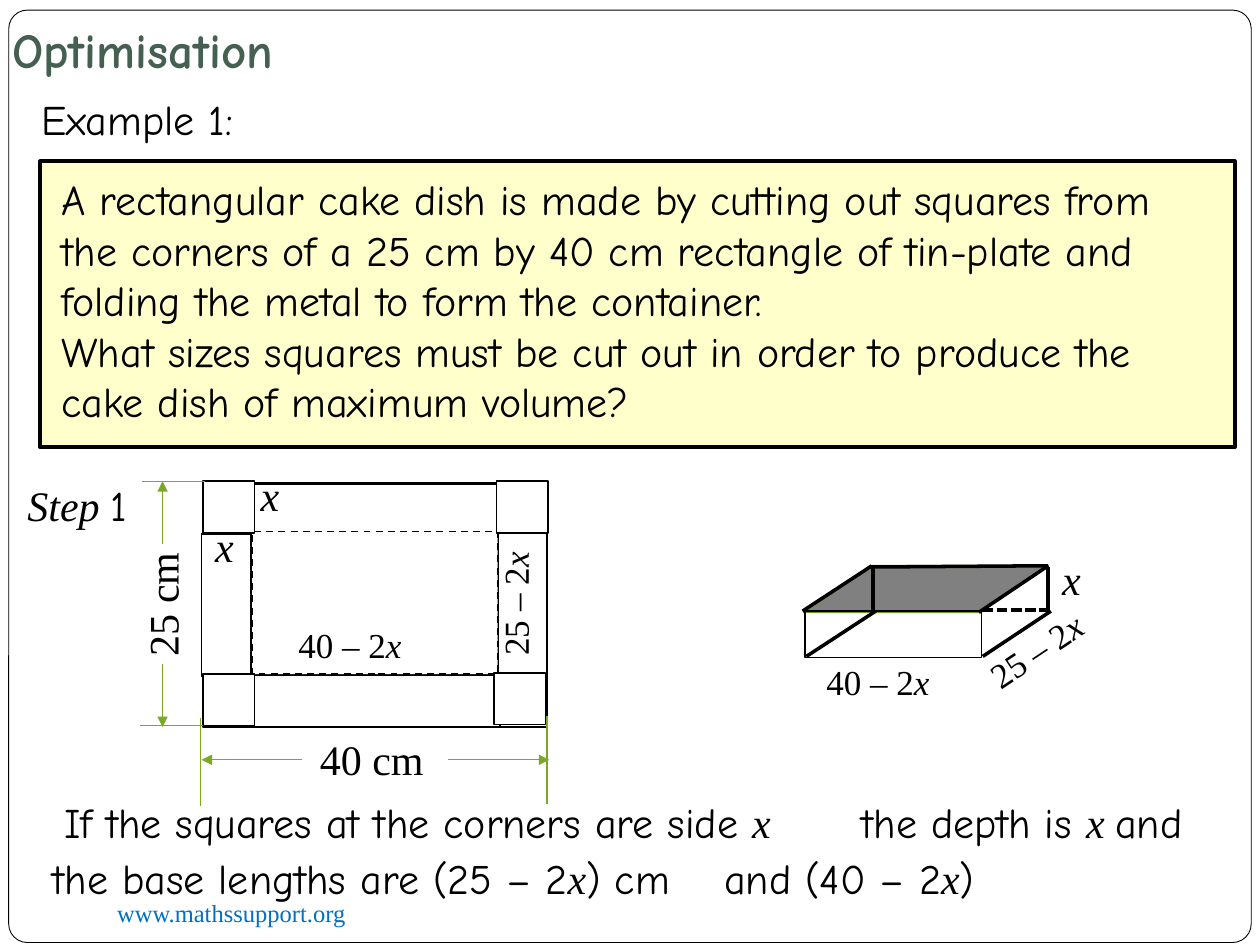
from lxml import etree
from pptx import Presentation
from pptx.dml.color import RGBColor
from pptx.enum.dml import MSO_LINE
from pptx.enum.shapes import MSO_CONNECTOR, MSO_SHAPE
from pptx.enum.text import MSO_ANCHOR
from pptx.oxml.ns import qn
from pptx.util import Pt

RECTANGLE = MSO_SHAPE.RECTANGLE
ROUNDED = MSO_SHAPE.ROUNDED_RECTANGLE
PARALLELOGRAM = MSO_SHAPE.PARALLELOGRAM
STRAIGHT = MSO_CONNECTOR.STRAIGHT
DASH, SHORT_DASH = MSO_LINE.DASH, MSO_LINE.SQUARE_DOT
BOTTOM = MSO_ANCHOR.BOTTOM

BLACK = RGBColor(0x00, 0x00, 0x00)
WHITE = RGBColor(0xFF, 0xFF, 0xFF)
CREAM = RGBColor(0xFF, 0xFF, 0xCC)
GREY = RGBColor(0x80, 0x80, 0x80)
GREEN = RGBColor(0x7C, 0xA8, 0x27)
DARK_GREEN = RGBColor(0x71, 0x96, 0x29)
TITLE_GREEN = RGBColor(0x45, 0x5F, 0x51)
LINK_BLUE = RGBColor(0x00, 0x70, 0xC0)

HAND, SERIF = "Comic Neue", "Times New Roman"

QUESTION = [
    "A rectangular cake dish is made by cutting out squares from the corners of "
    "a 25 cm by 40 cm rectangle of tin-plate and folding the metal to form the container.",
    "What sizes squares must be cut out in order to produce the cake dish of maximum volume?",
]

# Wrapped sentences: left, top, width, runs of (text, is_variable)
SENTENCES = [
    (16.6, 49.7, 419, [("Example 1:", False)]),
    (29.5, 451.4, 519, [("If the squares at the corners are side ", False), ("x", True)]),
    (485.3, 451.4, 232, [("the depth is ", False), ("x ", True), ("and", False)]),
    (23, 483.8, 395, [("the base lengths are (25 – 2", False), ("x", True), (") cm", False)]),
    (406.8, 483.8, 158, [("and (40 – 2", False), ("x", True), (")", False)]),
]

# Diagram labels: left, top, width, size, rotation, plain part, variable part
LABELS = [
    (175.7, 415.4, 80.6, 24, 0, "40 cm", ""),
    (55.4, 326.9, 74.2, 24, 270, "25 cm", ""),
    (141.8, 265, 25.2, 24, 0, "", "x"),
    (115.9, 293.8, 25.2, 24, 0, "", "x"),
    (599.8, 312.5, 25.2, 24, 0, "", "x"),
    (163.4, 352.8, 79.2, 20, 0, "40 – 2", "x"),
    (254.9, 326.2, 79.2, 20, 270, "25 – 2", "x"),
    (465.1, 373.7, 79.2, 20, 0, "40 – 2", "x"),
    (555.1, 354.2, 79.2, 20, 326.2, "25 – 2", "x"),
]

# Flat tin-plate: left, top, width, height
SHEET = (115.9, 275.8, 196.6, 139.7)
FLAPS = [
    (115.2, 305.3, 28.1, 81.4), (284.4, 303.1, 28.1, 82.8),
    (144.7, 276.5, 140.4, 28.1), (145.4, 385.9, 140.4, 29.5),
]
BASE = (144, 303.8, 140.4, 81.4)
CORNER_SIDE = 29.5
CORNERS = [(115.9, 275), (283.7, 275), (115.9, 385.2), (282.2, 384.5)]

# Dimension lines: start x, start y, end x, end y
EXTENSIONS = [
    (114.5, 410.4, 114.5, 460.8), (312.5, 409, 312.5, 459.4),
    (115.9, 414.7, 79.9, 414.7), (81.4, 275, 117.4, 275),
]
ARROWS = [
    (172.8, 434.2, 115.2, 434.2), (256.3, 434.2, 313.9, 434.2),
    (92.9, 379.4, 92.9, 415.4), (92.9, 311, 92.9, 275),
]

# Folded dish
DISH_TOP = (459.4, 323.3, 139.7, 26.6)
DISH_FRONT = (460.1, 349.2, 100.8, 26.6)
DISH_EDGES = [
    (460.8, 375.1, 500.4, 349.2), (561.6, 375.1, 600.5, 349.2),
    (559.4, 349.9, 599, 323.3), (458.6, 349.2, 498.2, 323.3),
    (499, 324, 599, 323.3), (599, 324, 599, 349.2), (499, 322.6, 499, 348.5),
]
DISH_HIDDEN_EDGE = (561.6, 348.5, 601.2, 348.5)


def add_outline(slide, frame, fill=WHITE, line=BLACK, width=1, kind=RECTANGLE, dash=None):
    shape = slide.shapes.add_shape(kind, *map(Pt, frame))
    shape.shadow.inherit = False
    if fill is None:
        shape.fill.background()
    else:
        shape.fill.solid()
        shape.fill.fore_color.rgb = fill
    shape.line.color.rgb = line
    shape.line.width = Pt(width)
    if dash:
        shape.line.dash_style = dash
    return shape


def add_line(slide, ends, color=BLACK, width=2, dash=None, arrow=False):
    connector = slide.shapes.add_connector(STRAIGHT, *map(Pt, ends))
    connector.line.color.rgb = color
    connector.line.width = Pt(width)
    if dash:
        connector.line.dash_style = dash
    if arrow:
        etree.SubElement(connector.line._get_or_add_ln(), qn("a:tailEnd"), type="triangle")
    etree.SubElement(connector._element.spPr, qn("a:effectLst"))


def add_text(slide, frame, paragraphs, wrap=True):
    """Add a text box; each run is (text, font, size, color, bold, italic)."""
    box = slide.shapes.add_textbox(*map(Pt, frame))
    text_frame = box.text_frame
    text_frame.word_wrap = wrap
    for index, runs in enumerate(paragraphs):
        paragraph = text_frame.paragraphs[0] if index == 0 else text_frame.add_paragraph()
        for text, name, size, color, bold, italic in runs:
            run = paragraph.add_run()
            run.text = text
            font = run.font
            font.name, font.size, font.bold, font.italic = name, Pt(size), bold, italic
            font.color.rgb = color
    return box


def add_wording(slide):
    title = add_text(slide, (0, 3.6, 612, 48.2),
                     [[("Optimisation", HAND, 28, TITLE_GREEN, True, False)]])
    title.text_frame.vertical_anchor = BOTTOM
    title.text_frame.margin_bottom = Pt(7.2)
    add_outline(slide, (23, 92.2, 682.6, 163.4), CREAM, width=2.25)
    question = add_text(slide, (28.1, 95.8, 671.8, 152.6),
                        [[(text, HAND, 24, BLACK, False, False)] for text in QUESTION])
    question.fill.solid()
    question.fill.fore_color.rgb = CREAM
    add_text(slide, (8.6, 270.7, 73.4, 36),
             [[("Step ", SERIF, 24, BLACK, False, True),
               ("1", HAND, 24, BLACK, False, False)]], wrap=False)
    for left, top, width, parts in SENTENCES:
        runs = [(text, SERIF if variable else HAND, 24, BLACK, False, variable)
                for text, variable in parts]
        add_text(slide, (left, top, width, 36), [runs])


def add_tin_plate(slide):
    add_outline(slide, SHEET, fill=None)
    for flap in FLAPS:
        add_outline(slide, flap)
    add_outline(slide, BASE, dash=DASH)
    for left, top in CORNERS:
        add_outline(slide, (left, top, CORNER_SIDE, CORNER_SIDE))
    for ends in EXTENSIONS:
        add_line(slide, ends, GREEN, 0.75)
    for ends in ARROWS:
        add_line(slide, ends, GREEN, 0.75, arrow=True)


def add_dish(slide):
    top = add_outline(slide, DISH_TOP, GREY, DARK_GREEN, kind=PARALLELOGRAM)
    top.adjustments[0] = 1.47
    add_outline(slide, DISH_FRONT, fill=None)
    for ends in DISH_EDGES:
        add_line(slide, ends)
    add_line(slide, DISH_HIDDEN_EDGE, dash=SHORT_DASH)


def add_labels(slide):
    for left, top, width, size, rotation, plain, variable in LABELS:
        runs = [(text, SERIF, size, BLACK, False, italic)
                for text, italic in ((plain, False), (variable, True)) if text]
        height = 36 if size == 24 else 31.7
        add_text(slide, (left, top, width, height), [runs], wrap=False).rotation = rotation


def main():
    presentation = Presentation()
    presentation.slide_width, presentation.slide_height = Pt(720), Pt(540)
    slide = presentation.slides.add_slide(presentation.slide_layouts[6])
    border = add_outline(slide, (5, 5.8, 710, 532.8), width=0.5, kind=ROUNDED)
    border.adjustments[0] = 0.02
    add_text(slide, (59.8, 509.8, 234, 24.5),
             [[("www.mathssupport.org", SERIF, 14, LINK_BLUE, False, False)]])
    add_wording(slide)
    add_tin_plate(slide)
    add_dish(slide)
    add_labels(slide)
    presentation.save("out.pptx")


if __name__ == "__main__":
    main()
